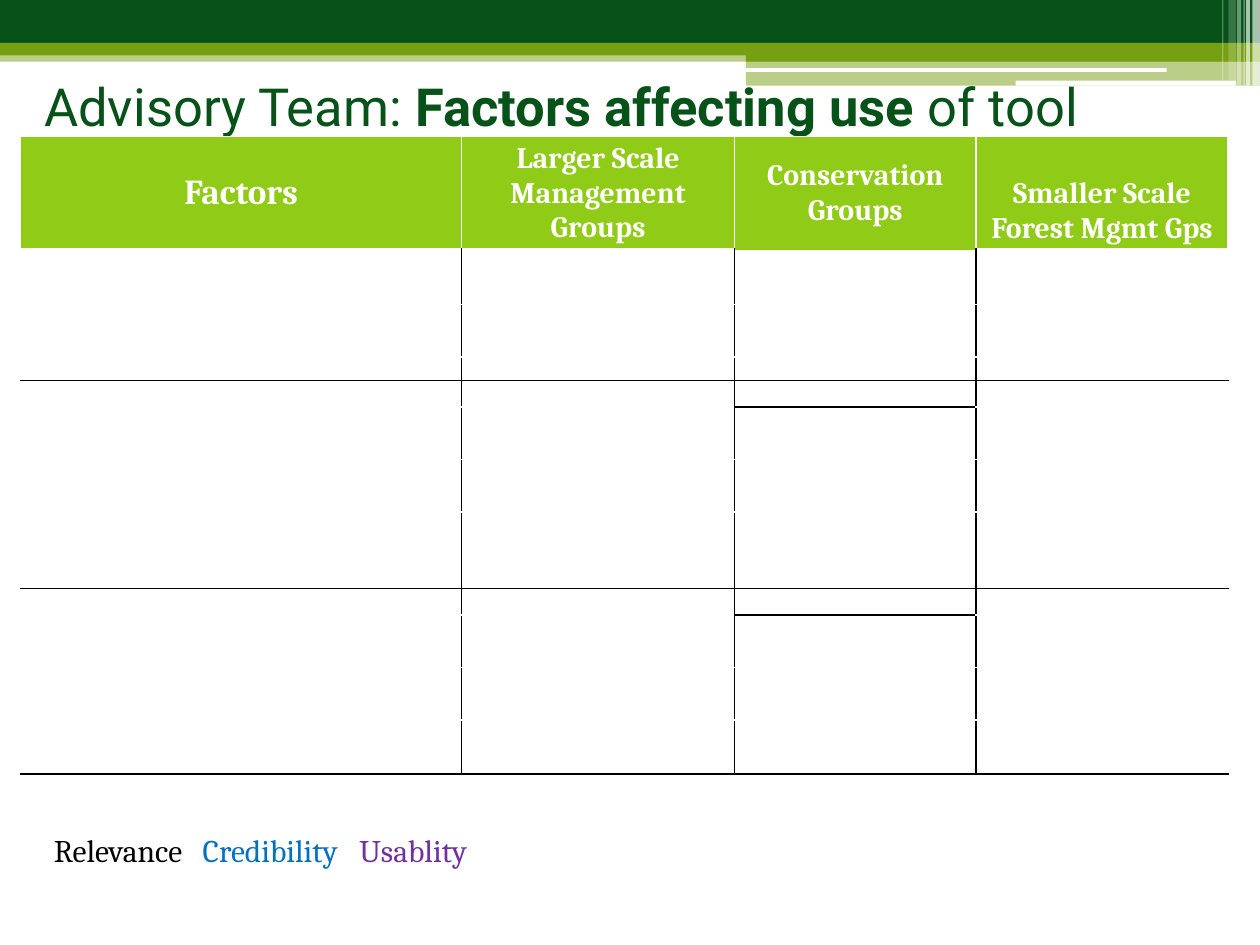
"""Build the advisory team slide with its blank table of factors."""
from lxml.etree import SubElement
from pptx import Presentation
from pptx.dml.color import RGBColor
from pptx.enum.shapes import MSO_SHAPE as Shape
from pptx.enum.text import MSO_ANCHOR as Anchor, PP_ALIGN as Align
from pptx.oxml.ns import qn
from pptx.util import Pt

COLORS = {
    "forest": "065218", "olive": "769F11", "lime": "8FCB17", "white": "FFFFFF",
    "black": "000000", "blue": "0070C0", "purple": "7030A0",
}
BANDS = [
    (0, 28.8, 720, 6.48, "olive", 50),
    (0, 0, 720, 24.48, "forest", 100),
    (0, 24.48, 720, 7.2, "olive", 100),
    (426.24, 28.08, 293.76, 7.2, "olive", 100),
    (426.24, 34.56, 293.76, 14.4, "olive", 50),
]
ROUNDED_BARS = [(425.5, 38.9, 241.2, 2.2), (580.3, 46.1, 126, 2.9)]
STRIPES = [
    (715.7, 4.3, 49, 65), (712.1, 2.2, 49, 65), (710.6, 0.7, 49, 60),
    (707, 2.2, 49, 40), (702, 4.3, 46.1, 20), (698.4, 0.7, 46.1, 30),
]
HEADINGS = [
    ("Factors", 20, Anchor.MIDDLE),
    ("Larger Scale Management Groups", 17, Anchor.MIDDLE),
    ("Conservation Groups", 17, Anchor.MIDDLE),
    ("Smaller Scale Forest Mgmt Gps", 17, Anchor.BOTTOM),
]
COLUMN_WIDTHS = [252, 156, 138, 144]
ROW_HEIGHTS = [65, 31, 30, 13.5, 15, 30, 30, 27, 17, 15, 30, 30, 31]
GROUP_ENDS = {3, 8, 12}
UNRULED_ROWS = {2, 6, 7}


def rgb(color):
    """Return the named colour."""
    return RGBColor.from_string(COLORS[color])


def add_run(paragraph, text, size, font, color, bold=False):
    """Append one formatted run."""
    run = paragraph.add_run()
    run.text = text
    run.font.size = Pt(size)
    run.font.name = font
    run.font.bold = bold
    run.font.color.rgb = rgb(color)


def add_bar(slide, left, top, width, height, color, opacity=100, kind=Shape.RECTANGLE):
    """Draw one borderless bar of the header ornament."""
    bar = slide.shapes.add_shape(kind, Pt(left), Pt(top), Pt(width), Pt(height))
    bar.shadow.inherit = False
    bar.line.fill.background()
    bar.fill.solid()
    bar.fill.fore_color.rgb = rgb(color)
    if opacity < 100:
        tint = bar.fill._xPr.find(qn("a:solidFill"))[0]
        SubElement(tint, qn("a:alpha"), val=str(opacity * 1000))


def add_ornament(slide):
    """Draw the bands, rounded bars and stripes at the top."""
    for band in BANDS:
        add_bar(slide, *band)
    for bar in ROUNDED_BARS:
        add_bar(slide, *bar, "white", kind=Shape.ROUNDED_RECTANGLE)
    for left, width, height, opacity in STRIPES:
        add_bar(slide, left, 0, width, height, "white", opacity)


def set_title(slide):
    """Place the title in front of the ornament and fill it."""
    title = slide.shapes.title
    slide.shapes._spTree.append(title._element)
    title.left, title.top, title.width, title.height = Pt(18), Pt(30.24), Pt(648), Pt(59.76)
    title.text_frame.vertical_anchor = Anchor.MIDDLE
    heading = title.text_frame.paragraphs[0]
    heading.alignment = Align.LEFT
    add_run(heading, "Advisory Team: ", 30, "Roboto", "forest")
    add_run(heading, "Factors affecting use ", 30, "Roboto", "forest", bold=True)
    add_run(heading, "of tool", 30, "Roboto", "forest")


def add_border(cell, side, color, width=1):
    """Rule one side of a cell; sides come in the order L, R, T, B."""
    border = SubElement(cell._tc.get_or_add_tcPr(), qn(f"a:ln{side}"), w=str(Pt(width)))
    fill = SubElement(border, qn("a:solidFill"))
    SubElement(fill, qn("a:srgbClr"), val=COLORS[color])


def rule_below(row, column):
    """Return colour and width of the rule under a cell, or None."""
    if row in GROUP_ENDS:
        return "black", 1
    if row in UNRULED_ROWS or column == 2:
        return None
    return "white", 3 if row == 0 else 1


def format_cell(cell, row, column):
    """Set borders, fill and text of one cell."""
    divider = "white" if row == 0 else "black"
    add_border(cell, "L", divider if column > 0 else "white")
    add_border(cell, "R", divider if column < len(COLUMN_WIDTHS) - 1 else "white")
    above = rule_below(row - 1, column) if row else ("white", 1)
    for side, rule in (("T", above), ("B", rule_below(row, column))):
        if rule:
            add_border(cell, side, *rule)
    paragraph = cell.text_frame.paragraphs[0]
    if row == 0:
        text, size, anchor = HEADINGS[column]
        cell.fill.solid()
        cell.fill.fore_color.rgb = rgb("lime")
        cell.vertical_anchor = anchor
        cell.margin_top = cell.margin_bottom = Pt(2.7)
        paragraph.alignment = Align.CENTER
        add_run(paragraph, text, size, "Cambria", "white", bold=True)
    else:
        cell.fill.background()
        cell.margin_top = cell.margin_bottom = 0
        SubElement(paragraph._p, qn("a:endParaRPr"), sz="800")


def add_factor_table(slide):
    """Add the table with its headings and blank groups of rows."""
    frame = slide.shapes.add_table(
        len(ROW_HEIGHTS), len(COLUMN_WIDTHS), Pt(11.8), Pt(78),
        Pt(sum(COLUMN_WIDTHS)), Pt(sum(ROW_HEIGHTS)))
    factors = frame.table
    factors.horz_banding = False
    style = factors._tbl.tblPr.find(qn("a:tableStyleId"))
    style.text = "{2D5ABB26-0587-4C30-8999-92F81FD0307C}"
    for column, width in zip(factors.columns, COLUMN_WIDTHS):
        column.width = Pt(width)
    for row, height in enumerate(ROW_HEIGHTS):
        factors.rows[row].height = Pt(height)
        for column in range(len(COLUMN_WIDTHS)):
            format_cell(factors.cell(row, column), row, column)


def add_legend(slide):
    """Add the colour key, spaced with tab stops."""
    legend = slide.shapes.add_textbox(Pt(23.76), Pt(471.6), Pt(274.3), Pt(28.8))
    legend.text_frame.word_wrap = True
    key = legend.text_frame.paragraphs[0]
    tabs = SubElement(key._p.get_or_add_pPr(), qn("a:tabLst"))
    for position in (85, 174.5):
        SubElement(tabs, qn("a:tab"), pos=str(Pt(position)), algn="l")
    for text, color in (("Relevance\t", "black"), ("Credibility\t", "blue"),
                        ("Usablity", "purple")):
        add_run(key, text, 18, "Cambria", color)


def main():
    """Build and save the slide."""
    deck = Presentation()
    deck.slide_width, deck.slide_height = Pt(720), Pt(540)
    slide = deck.slides.add_slide(deck.slide_layouts[5])
    add_ornament(slide)
    set_title(slide)
    add_factor_table(slide)
    add_legend(slide)
    deck.save("out.pptx")


if __name__ == "__main__":
    main()
